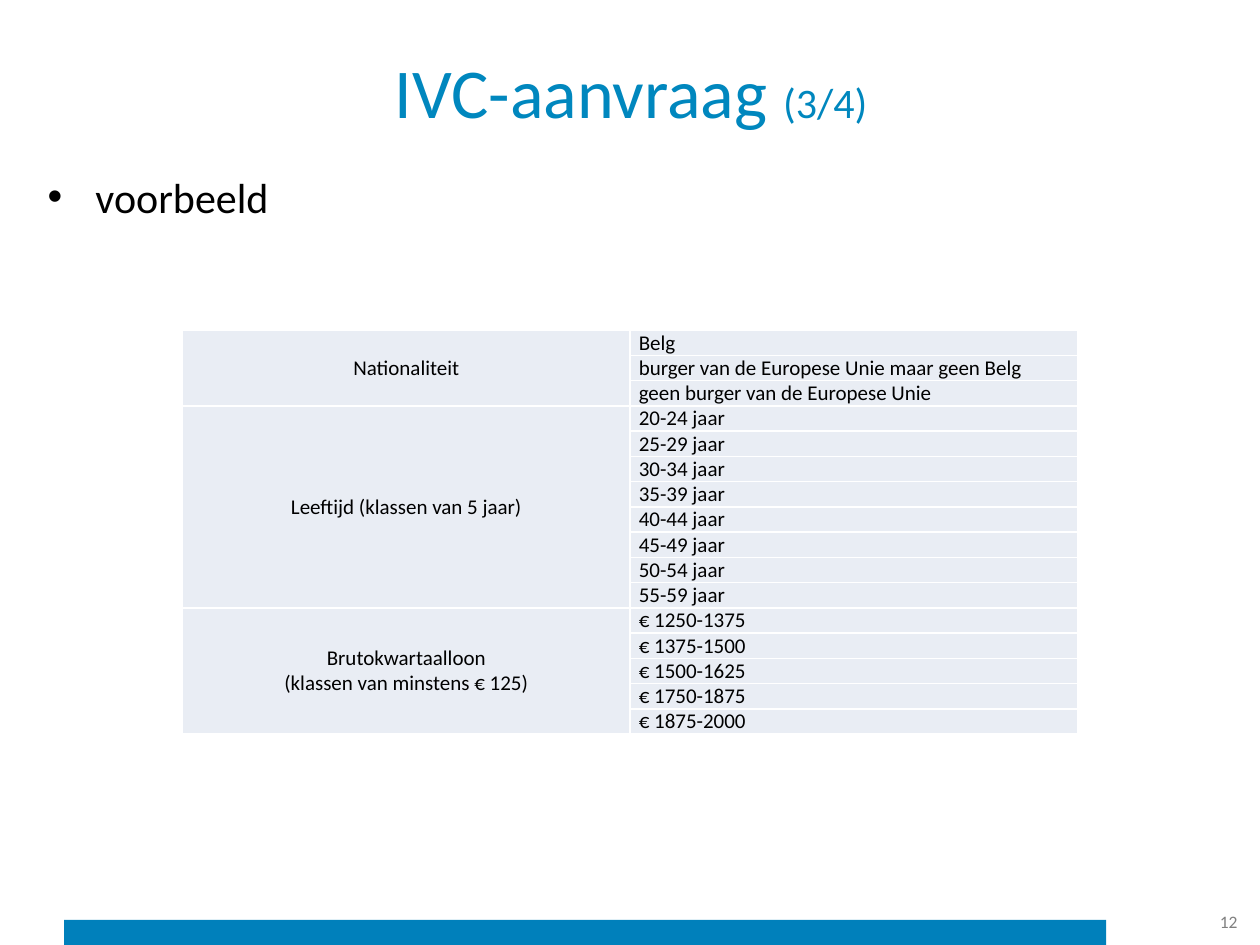
from lxml import etree
from pptx import Presentation
from pptx.dml.color import RGBColor
from pptx.enum.shapes import MSO_SHAPE
from pptx.enum.text import MSO_ANCHOR, PP_ALIGN
from pptx.oxml.ns import qn
from pptx.util import Inches, Pt

RECTANGLE = MSO_SHAPE.RECTANGLE
TOP, MIDDLE = MSO_ANCHOR.TOP, MSO_ANCHOR.MIDDLE
LEFT, CENTER, RIGHT = PP_ALIGN.LEFT, PP_ALIGN.CENTER, PP_ALIGN.RIGHT
JUSTIFY = PP_ALIGN.JUSTIFY

FONT = "Calibri"
COLORS = {
    "bar": "0080BB",
    "title": "0087BE",
    "text": "000000",
    "number": "808080",
    "cell": "E9EDF4",
    "border": "FFFFFF",
}

# Content
TITLE = [("IVC-aanvraag ", 40), ("(3/4)", 24)]
BULLET = "voorbeeld"
PAGE_NUMBER = "12"
GROUPS = [
    ("Nationaliteit", [
        "Belg",
        "burger van de Europese Unie maar geen Belg",
        "geen burger van de Europese Unie",
    ]),
    ("Leeftijd (klassen van 5 jaar)", [
        "20-24 jaar", "25-29 jaar", "30-34 jaar", "35-39 jaar",
        "40-44 jaar", "45-49 jaar", "50-54 jaar", "55-59 jaar",
    ]),
    ("Brutokwartaalloon\n(klassen van minstens € 125)", [
        "€ 1250-1375", "€ 1375-1500", "€ 1500-1625",
        "€ 1750-1875", "€ 1875-2000",
    ]),
]
TABLE_LEFT, TABLE_TOP = 1.45, 2.62
COLUMN_WIDTH, ROW_HEIGHT = 3.55, 0.2


def color(name):
    return RGBColor.from_string(COLORS[name])


def format_span(span, size, color_name):
    span.font.name = FONT
    span.font.size = Pt(size)
    span.font.color.rgb = color(color_name)


def add_text(page, place, spans, color_name, align, anchor):
    box = page.shapes.add_textbox(*(Inches(value) for value in place))
    frame = box.text_frame
    frame.word_wrap = True
    frame.vertical_anchor = anchor
    para = frame.paragraphs[0]
    para.alignment = align
    for text, size in spans:
        span = para.add_run()
        span.text = text
        format_span(span, size, color_name)
    return para


def add_bullet(para, indent):
    properties = para._p.get_or_add_pPr()
    properties.set("marL", str(Inches(indent)))
    properties.set("indent", str(-Inches(indent)))
    etree.SubElement(properties, qn("a:buFont")).set("typeface", "Arial")
    etree.SubElement(properties, qn("a:buChar")).set("char", "•")


def style_cell(cell):
    cell.margin_left = cell.margin_right = Inches(0.07)
    cell.margin_top = cell.margin_bottom = 0
    properties = cell._tc.get_or_add_tcPr()
    for side in ("lnL", "lnR", "lnT", "lnB"):
        line = etree.SubElement(properties, qn(f"a:{side}"), w=str(Pt(1)))
        fill = etree.SubElement(line, qn("a:solidFill"))
        etree.SubElement(fill, qn("a:srgbClr"), val=COLORS["border"])
    cell.fill.solid()
    cell.fill.fore_color.rgb = color("cell")


def write_cell(cell, text, align, anchor):
    cell.text_frame.text = text
    cell.vertical_anchor = anchor
    for para in cell.text_frame.paragraphs:
        para.alignment = align
        for span in para.runs:
            format_span(span, 12, "text")


def add_groups(page):
    row_count = sum(len(values) for _, values in GROUPS)
    table = page.shapes.add_table(
        row_count, 2, Inches(TABLE_LEFT), Inches(TABLE_TOP),
        Inches(2 * COLUMN_WIDTH), Inches(row_count * ROW_HEIGHT)).table
    table.first_row = False
    table.horz_banding = False
    for cell in table.iter_cells():
        style_cell(cell)

    row = 0
    for label, values in GROUPS:
        label_cell = table.cell(row, 0)
        label_cell.merge(table.cell(row + len(values) - 1, 0))
        write_cell(label_cell, label, CENTER, MIDDLE)
        for value in values:
            write_cell(table.cell(row, 1), value, JUSTIFY, TOP)
            row += 1


def main():
    deck = Presentation()
    deck.slide_width, deck.slide_height = Inches(10), Inches(7.5)
    page = deck.slides.add_slide(deck.slide_layouts[6])

    # Bar at the foot
    bar = page.shapes.add_shape(
        RECTANGLE, Inches(0.51), Inches(7.3), Inches(8.27), Inches(0.2))
    bar.shadow.inherit = False
    bar.fill.solid()
    bar.fill.fore_color.rgb = color("bar")
    bar.line.fill.background()

    # Title, bullet and page number
    add_text(page, (0.51, 0.21, 9, 1.01), TITLE, "title", CENTER, MIDDLE)
    bullet = add_text(page, (0.28, 1.31, 9.64, 5.59), [(BULLET, 24)],
                      "text", LEFT, TOP)
    add_bullet(bullet, 0.38)
    add_text(page, (9.11, 7.13, 0.81, 0.37), [(PAGE_NUMBER, 10)],
             "number", RIGHT, MIDDLE)

    # Table of classes
    add_groups(page)
    deck.save("out.pptx")


if __name__ == "__main__":
    main()
